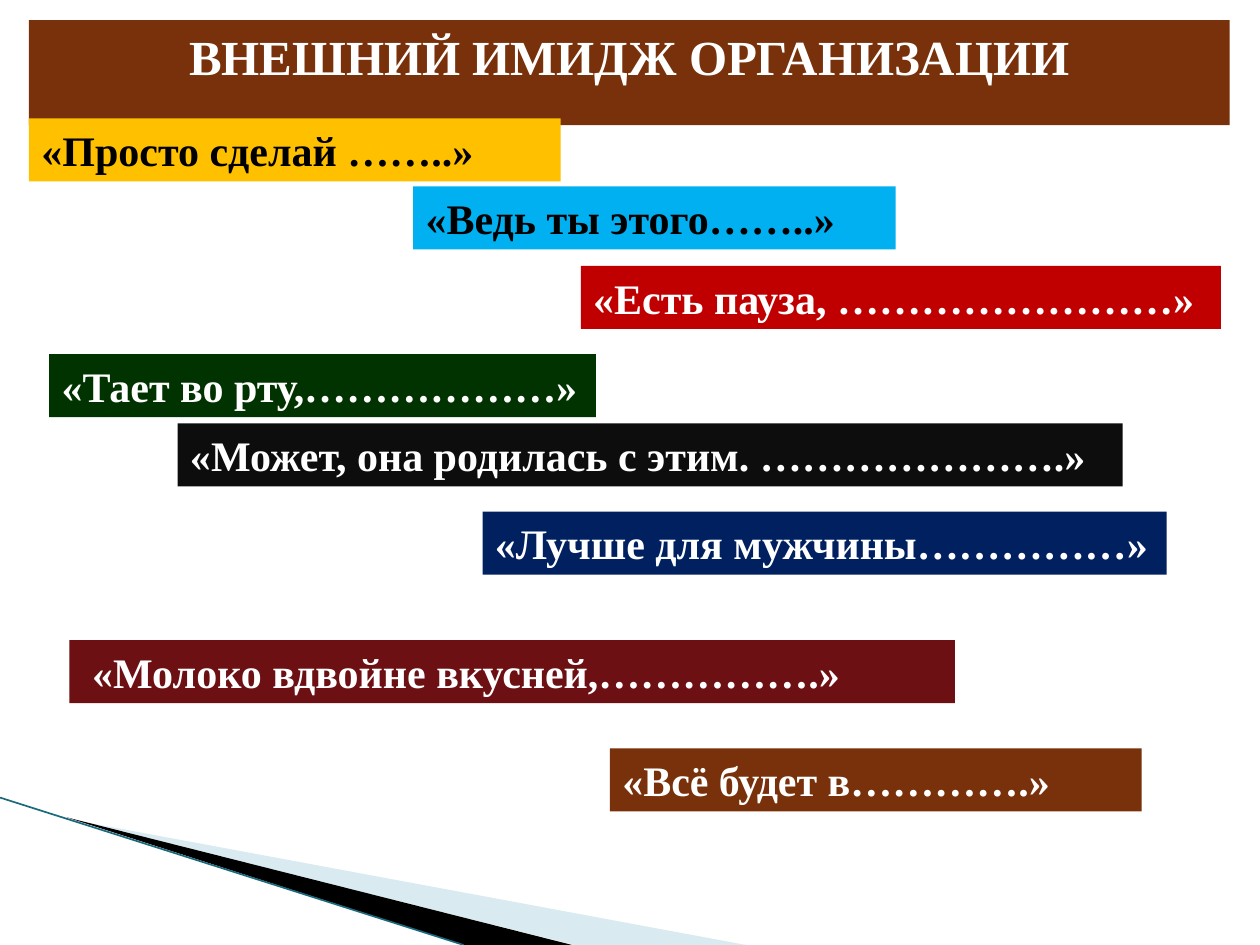
from dataclasses import dataclass

from lxml import etree
from pptx import Presentation
from pptx.dml.color import RGBColor
from pptx.enum.shapes import MSO_CONNECTOR
from pptx.enum.text import MSO_ANCHOR, MSO_AUTO_SIZE, PP_ALIGN
from pptx.oxml.ns import qn
from pptx.util import Inches, Pt

STRAIGHT = MSO_CONNECTOR.STRAIGHT
TOP, MIDDLE = MSO_ANCHOR.TOP, MSO_ANCHOR.MIDDLE
GROW = MSO_AUTO_SIZE.SHAPE_TO_FIT_TEXT
LEFT, CENTER = PP_ALIGN.LEFT, PP_ALIGN.CENTER

WHITE = RGBColor(0xFF, 0xFF, 0xFF)
BLACK = RGBColor(0x00, 0x00, 0x00)
BROWN = RGBColor(0x78, 0x31, 0x0B)
AMBER = RGBColor(0xFF, 0xC0, 0x00)
SKY = RGBColor(0x00, 0xB0, 0xF0)
RED = RGBColor(0xC0, 0x00, 0x00)
GREEN = RGBColor(0x00, 0x33, 0x00)
CHARCOAL = RGBColor(0x0D, 0x0D, 0x0D)
NAVY = RGBColor(0x00, 0x20, 0x60)
MAROON = RGBColor(0x6D, 0x10, 0x14)
PALE_BLUE = RGBColor(0xA0, 0xCB, 0xDC)
TEAL = RGBColor(0x1B, 0x6A, 0x7C)

FONT = "Times New Roman"
SLIDE_WIDTH, SLIDE_HEIGHT = Inches(10), Inches(7.5)
SLOGAN_HEIGHT = 6.67


@dataclass(frozen=True)
class Banner:
    """A filled text bar; lengths are percentages of the slide's size."""
    text: str
    left: float
    top: float
    width: float
    fill: RGBColor
    color: RGBColor = WHITE
    height: float = SLOGAN_HEIGHT
    size: int = 24
    align: PP_ALIGN = LEFT
    anchor: MSO_ANCHOR = TOP
    wrap: bool = True


@dataclass(frozen=True)
class Wedge:
    """A corner sliver; points are percentages of the slide's size."""
    points: tuple[tuple[float, float], ...]
    fill: RGBColor
    opacity: int = 100


TITLE = Banner("ВНЕШНИЙ ИМИДЖ ОРГАНИЗАЦИИ", 2.3, 2.13, 95.3, BROWN,
               height=7.6, size=28, align=CENTER)

SLOGANS = (
    Banner("«Просто сделай ……..»", 2.3, 12.53, 42.2, AMBER, BLACK),
    Banner("«Ведь ты этого……..»", 32.8, 19.73, 38.3, SKY, BLACK, anchor=MIDDLE),
    Banner("«Есть пауза, ……………………»", 46.1, 28.13, 50.8, RED, anchor=MIDDLE),
    Banner("«Тает во рту,………………»", 3.9, 37.47, 43.4, GREEN, wrap=False),
    Banner("«Может, она родилась с этим. ………………….»", 14.1, 44.8, 75, CHARCOAL),
    Banner("«Лучше для мужчины……………»", 38.3, 54.13, 54.3, NAVY, wrap=False),
    Banner(" «Молоко вдвойне вкусней,…………….»", 5.5, 67.73, 70.3, MAROON),
    Banner("«Всё будет в………….»", 48.4, 79.2, 42.2, BROWN, anchor=MIDDLE),
)

WEDGES = (
    Wedge(((5.5, 86.7), (59.2, 100), (45.6, 100)), PALE_BLUE, 40),
    Wedge(((5.3, 86.5), (45.4, 100), (36.8, 100)), BLACK),
)
EDGE = ((0, 84.4), (36.8, 100))


def across(percent: float) -> int:
    return round(SLIDE_WIDTH * percent / 100)


def down(percent: float) -> int:
    return round(SLIDE_HEIGHT * percent / 100)


def draw_wedge(page, wedge: Wedge) -> None:
    start, *others = [(across(x), down(y)) for x, y in wedge.points]
    outline = page.shapes.build_freeform(*start)
    outline.add_line_segments(others, close=True)
    shape = outline.convert_to_shape()
    shape.shadow.inherit = False
    shape.line.fill.background()
    shape.fill.solid()
    shape.fill.fore_color.rgb = wedge.fill
    if wedge.opacity < 100:
        color = shape.fill._xPr.find(f".//{qn('a:srgbClr')}")
        etree.SubElement(color, qn("a:alpha"), val=str(wedge.opacity * 1000))


def draw_edge(page) -> None:
    (x1, y1), (x2, y2) = EDGE
    edge = page.shapes.add_connector(
        STRAIGHT, across(x1), down(y1), across(x2), down(y2))
    edge.line.color.rgb = TEAL
    edge.line.width = Pt(0.95)
    etree.SubElement(edge._element.spPr, qn("a:effectLst"))


def fill_banner(box, banner: Banner) -> None:
    """Place, colour and write a banner in a text box or placeholder."""
    box.left, box.top = across(banner.left), down(banner.top)
    box.width, box.height = across(banner.width), down(banner.height)
    box.fill.solid()
    box.fill.fore_color.rgb = banner.fill
    frame = box.text_frame
    frame.word_wrap = banner.wrap
    frame.auto_size = GROW
    frame.vertical_anchor = banner.anchor
    para = frame.paragraphs[0]
    para.alignment = banner.align
    span = para.add_run()
    span.text = banner.text
    span.font.name = FONT
    span.font.size = Pt(banner.size)
    span.font.bold = True
    span.font.color.rgb = banner.color


def main() -> None:
    deck = Presentation()
    deck.slide_width, deck.slide_height = SLIDE_WIDTH, SLIDE_HEIGHT
    page = deck.slides.add_slide(deck.slide_layouts.get_by_name("Title Only"))
    for wedge in WEDGES:
        draw_wedge(page, wedge)
    draw_edge(page)
    fill_banner(page.shapes.title, TITLE)
    for slogan in SLOGANS:
        fill_banner(page.shapes.add_textbox(0, 0, 0, 0), slogan)
    deck.save("out.pptx")


if __name__ == "__main__":
    main()
